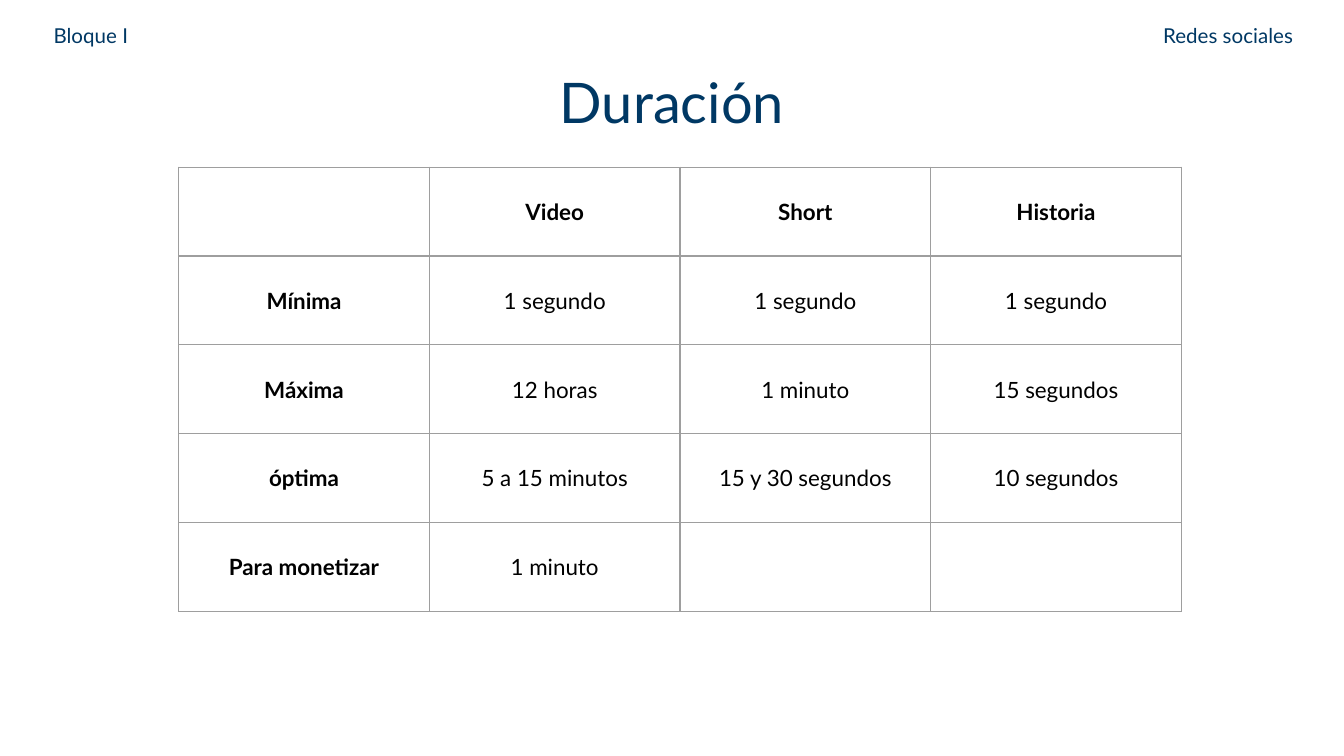
from dataclasses import dataclass

from lxml import etree
from pptx import Presentation
from pptx.dml.color import RGBColor
from pptx.enum.text import MSO_ANCHOR, PP_ALIGN
from pptx.oxml.ns import qn
from pptx.util import Inches, Pt

LEFT, CENTER, RIGHT = PP_ALIGN.LEFT, PP_ALIGN.CENTER, PP_ALIGN.RIGHT
MIDDLE = MSO_ANCHOR.MIDDLE

# The slide is a grid of square units, 100 columns wide
COLUMNS, ROWS = 100, 56.25
UNIT = Inches(0.1)
MARGIN = UNIT


@dataclass(frozen=True)
class Theme:
    font: str = "Lato"
    navy: str = "003864"
    black: str = "000000"
    white: str = "FFFFFF"
    border: str = "9E9E9E"
    border_width: float = 0.75
    header_size: int = 11
    title_size: int = 30
    table_size: int = 12


THEME = Theme()

DURATIONS = [
    ["", "Video", "Short", "Historia"],
    ["Mínima", "1 segundo", "1 segundo", "1 segundo"],
    ["Máxima", "12 horas", "1 minuto", "15 segundos"],
    ["óptima", "5 a 15 minutos", "15 y 30 segundos", "10 segundos"],
    ["Para monetizar", "1 minuto", "", ""],
]


def grid(*lengths):
    """Turn grid units into slide lengths."""
    return [round(length * UNIT) for length in lengths]


def set_margins(target):
    for side in ("left", "top", "right", "bottom"):
        setattr(target, f"margin_{side}", MARGIN)


def write(paragraph, text, size, color, alignment, bold=False):
    paragraph.alignment = alignment
    run = paragraph.add_run()
    run.text = text
    formats = {"name": THEME.font, "size": Pt(size), "bold": bold}
    for name, value in formats.items():
        setattr(run.font, name, value)
    run.font.color.rgb = RGBColor.from_string(color)


def add_label(slide, box, text, size, alignment):
    """A line of navy text that fills its box."""
    frame = slide.shapes.add_textbox(*grid(*box)).text_frame
    frame.word_wrap = True
    set_margins(frame)
    write(frame.paragraphs[0], text, size, THEME.navy, alignment)


def add_borders(cell):
    properties = cell._tc.get_or_add_tcPr()
    for position, edge in enumerate(("a:lnL", "a:lnR", "a:lnT", "a:lnB")):
        line = etree.Element(qn(edge), w=str(Pt(THEME.border_width)))
        fill = etree.SubElement(line, qn("a:solidFill"))
        etree.SubElement(fill, qn("a:srgbClr"), val=THEME.border)
        properties.insert(position, line)


def add_duration_table(slide, box, rows):
    """Equal cells, with bold headings in the first row and column."""
    left, top, width, height = grid(*box)
    table = slide.shapes.add_table(
        len(rows), len(rows[0]), left, top, width, height
    ).table
    for row_index, row in enumerate(rows):
        for column_index, text in enumerate(row):
            cell = table.cell(row_index, column_index)
            cell.fill.solid()
            cell.fill.fore_color.rgb = RGBColor.from_string(THEME.white)
            cell.vertical_anchor = MIDDLE
            set_margins(cell)
            add_borders(cell)
            if text:
                heading = row_index == 0 or column_index == 0
                write(cell.text_frame.paragraphs[0], text, THEME.table_size,
                      THEME.black, CENTER, heading)


def build_slide(presentation):
    slide = presentation.slides.add_slide(presentation.slide_layouts[6])
    # Running header and title
    add_label(slide, (3, 0.8, 8.9, 3.9), "Bloque I", THEME.header_size, LEFT)
    add_label(slide, (3.9, 4, 92.2, 7.1), "Duración", THEME.title_size, CENTER)
    # Durations by format
    add_duration_table(slide, (13.3, 12.45, 74.6, 33.05), DURATIONS)
    # Subject
    add_label(slide, (75.9, 0.8, 21.3, 3.9), "Redes sociales",
              THEME.header_size, RIGHT)


def main():
    presentation = Presentation()
    presentation.slide_width, presentation.slide_height = grid(COLUMNS, ROWS)
    build_slide(presentation)
    presentation.save("out.pptx")


if __name__ == "__main__":
    main()
